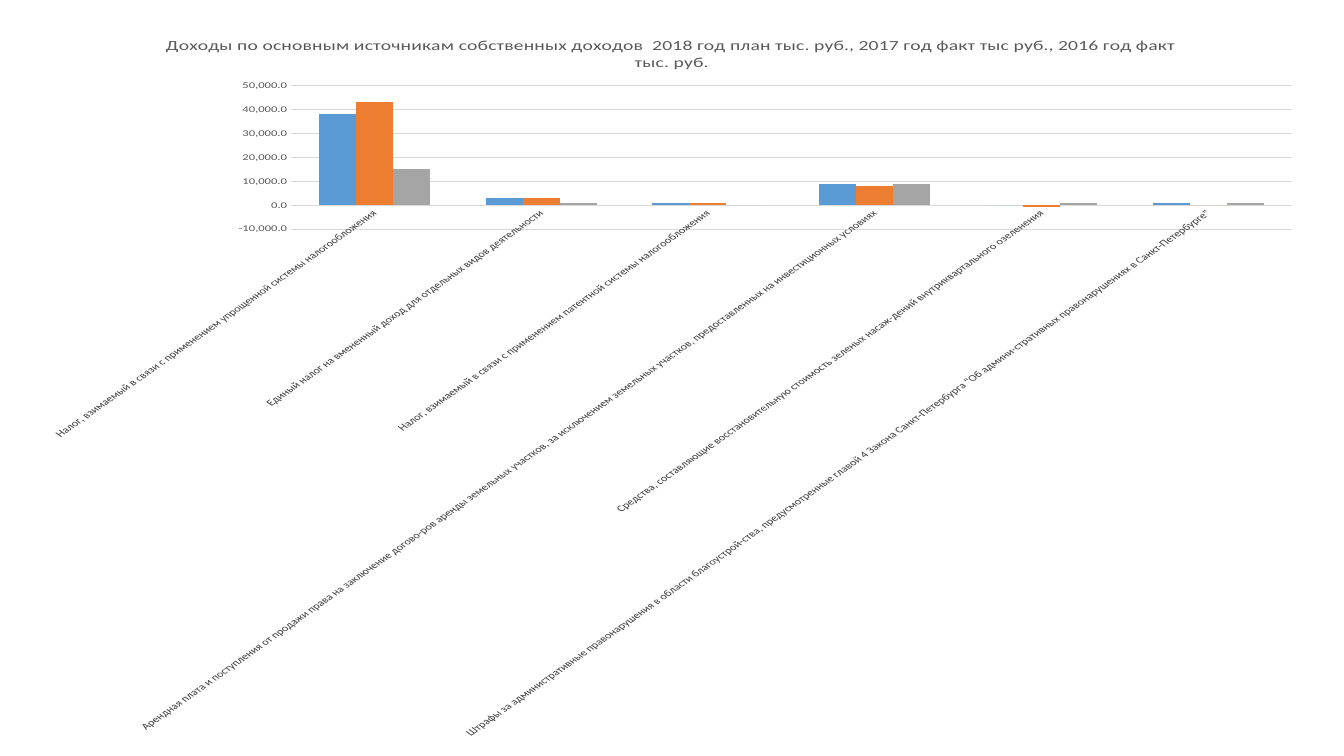
from pptx import Presentation
from pptx.chart.data import CategoryChartData
from pptx.dml.color import RGBColor
from pptx.enum.chart import XL_CHART_TYPE, XL_TICK_LABEL_POSITION, XL_TICK_MARK
from pptx.util import Cm, Pt

COLUMNS = XL_CHART_TYPE.COLUMN_CLUSTERED
NO_TICK = XL_TICK_MARK.NONE
BY_AXIS = XL_TICK_LABEL_POSITION.NEXT_TO_AXIS
FONT = "Calibri"
HUES = {"text": "595959", "grid": "D9D9D9", "base": "000000"}
TITLE = ("Доходы по основным источникам собственных доходов  2018 год план "
         "тыс. руб., 2017 год факт тыс руб., 2016 год факт тыс. руб.")
TAXES = [
    "Налог, взимаемый в связи с применением упрощенной системы налогообложения",
    "Единый налог на вмененный доход для отдельных видов деятельности",
    "Налог, взимаемый в связи с применением патентной системы налогообложения",
    "Арендная плата и поступления от продажи права на заключение догово-ров "
    "аренды земельных участков, за исключением земельных участков, "
    "предоставленных на инвестиционных условиях",
    "Средства, составляющие восстановительную стоимость зеленых "
    "насаж-дений внутриквартального озеленения",
    "Штрафы за административные правонарушения в области "
    "благоустрой-ства, предусмотренные главой 4 Закона Санкт-Петербурга "
    "\"Об админи-стративных правонарушениях в Санкт-Петербурге\"",
]
SERIES = [
    ("Series 1", "5B9BD5", [38000, 3000, 1000, 9000, 0, 1000]),
    ("Series 2", "ED7D31", [43000, 3000, 1000, 8000, -1000, 0]),
    ("Series 3", "A5A5A5", [15000, 1000, 0, 9000, 1000, 1000]),
]


def style(font, size, hue):
    """Set the face, size and colour of a font."""
    font.name = FONT
    font.size = Pt(size)
    font.bold = False
    font.color.rgb = RGBColor.from_string(HUES[hue])


def dress(axis):
    """Give an axis plain small labels without ticks or a line."""
    axis.major_tick_mark = axis.minor_tick_mark = NO_TICK
    axis.tick_label_position = BY_AXIS
    axis.format.line.fill.background()
    style(axis.tick_labels.font, 9, "text")


def add_income(slide, left, top, width, height):
    """Place the income column chart in the given box."""
    data = CategoryChartData(number_format="#,##0.0")
    data.categories = TAXES
    for name, _, vals in SERIES:
        data.add_series(name, vals)
    chart = slide.shapes.add_chart(COLUMNS, left, top, width, height, data).chart
    style(chart.font, 10, "base")
    chart.has_legend = False

    chart.has_title = True
    chart.chart_title.include_in_layout = False
    head = chart.chart_title.text_frame.paragraphs[0]
    head.text = TITLE
    style(head.runs[0].font, 14, "text")

    plot = chart.plots[0]
    plot.gap_width = 150
    plot.overlap = 0
    plot.vary_by_categories = False
    for bars, (_, color, _) in zip(plot.series, SERIES):
        bars.invert_if_negative = False
        bars.format.fill.solid()
        bars.format.fill.fore_color.rgb = RGBColor.from_string(color)

    names, sums = chart.category_axis, chart.value_axis
    dress(names)
    names.has_major_gridlines = False
    body = names._element.txPr.bodyPr
    body.set("rot", "-2700000")
    body.set("vert", "horz")

    dress(sums)
    sums.minimum_scale, sums.maximum_scale = -10000, 50000
    sums.major_unit = 10000
    sums.tick_labels.number_format = "#,##0.0"
    sums.tick_labels.number_format_is_linked = False
    grid = sums.major_gridlines.format.line
    grid.width = Pt(0.75)
    grid.color.rgb = RGBColor.from_string(HUES["grid"])


def main():
    """Build the deck and save it."""
    deck = Presentation()
    deck.slide_width, deck.slide_height = Cm(33.87), Cm(19.05)
    slide = deck.slides.add_slide(deck.slide_layouts[6])
    add_income(slide, Cm(0.66), Cm(0.48), Cm(32.54), Cm(18.11))
    deck.save("out.pptx")


if __name__ == "__main__":
    main()
